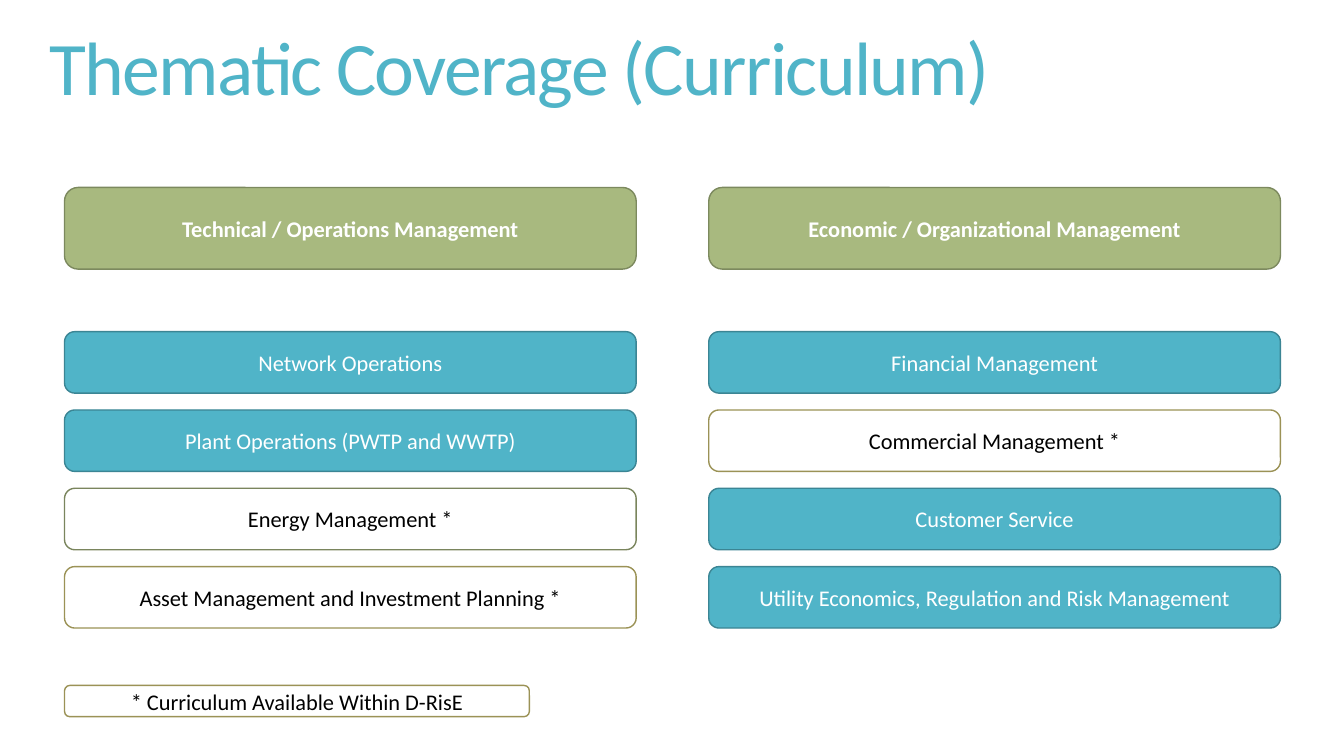
import pptx
import pptx.util
import pptx.dml.color
import pptx.enum.shapes
import pptx.enum.text

# Content: each box is (text, style)
TITLE = "Thematic Coverage (Curriculum)"
COLUMNS = [
    ("Technical / Operations Management", [
        ("Network Operations", "topic"),
        ("Plant Operations (PWTP and WWTP)", "topic"),
        ("Energy Management *", "available_green"),
        ("Asset Management and Investment Planning *", "available"),
    ]),
    ("Economic / Organizational Management", [
        ("Financial Management", "topic"),
        ("Commercial Management *", "available"),
        ("Customer Service", "topic"),
        ("Utility Economics, Regulation and Risk Management", "topic"),
    ]),
]
LEGEND = "* Curriculum Available Within D-RisE"

# Styles: fill, line, text colour, bold
STYLES = {
    "header": ("A8B97F", "7C895E", "FFFFFF", True),
    "topic": ("50B4C8", "3B8594", "FFFFFF", False),
    "available": ("FFFFFF", "9B9256", "000000", False),
    "available_green": ("FFFFFF", "7A855D", "000000", False),
}

# Grid in inches
LEFT, COL_W, COL_STEP = 0.64, 5.67, 6.39
HEADER_TOP, HEADER_H = 1.86, 0.81
TOPIC_TOP, TOPIC_H, TOPIC_STEP = 3.29, 0.61, 0.777

ALIGN = pptx.enum.text.PP_ALIGN


def color(hex_code):
    return pptx.dml.color.RGBColor.from_string(hex_code)


def inches(*lengths):
    return [pptx.util.Inches(n) for n in lengths]


def write(sp, text, size=16, hex_code="000000", bold=False,
          align=ALIGN.CENTER, line_spacing=None, tracking=None):
    tf = sp.text_frame
    tf.word_wrap = True
    tf.vertical_anchor = pptx.enum.text.MSO_ANCHOR.MIDDLE
    p = tf.paragraphs[0]
    p.alignment = align
    p.line_spacing = line_spacing
    r = p.add_run()
    r.text = text
    r.font.name = "Calibri"
    r.font.size = pptx.util.Pt(size)
    r.font.bold = bold
    r.font.color.rgb = color(hex_code)
    if tracking is not None:
        r.font._element.set("spc", str(round(tracking * 100)))


def add_box(s, text, style, left, top, width, height):
    fill, line, text_color, bold = STYLES[style]
    sp = s.shapes.add_shape(pptx.enum.shapes.MSO_SHAPE.ROUNDED_RECTANGLE,
                            *inches(left, top, width, height))
    sp.shadow.inherit = False
    sp.fill.solid()
    sp.fill.fore_color.rgb = color(fill)
    sp.line.color.rgb = color(line)
    sp.line.width = pptx.util.Pt(1)
    write(sp, text, hex_code=text_color, bold=bold)


def main():
    prs = pptx.Presentation()
    prs.slide_width, prs.slide_height = inches(13.33, 7.5)
    s = prs.slides.add_slide(prs.slide_layouts[6])

    # Title
    title = s.shapes.add_textbox(*inches(0.39, 0.21, 11.78, 1.02))
    write(title, TITLE, size=54, hex_code="50B4C8", align=ALIGN.LEFT,
          line_spacing=0.85, tracking=-1.2)

    # Two columns: a header above its topics
    for col, (header, topics) in enumerate(COLUMNS):
        left = LEFT + col * COL_STEP
        add_box(s, header, "header", left, HEADER_TOP, COL_W, HEADER_H)
        for row, (topic, style) in enumerate(topics):
            add_box(s, topic, style, left, TOPIC_TOP + row * TOPIC_STEP,
                    COL_W, TOPIC_H)

    # Legend
    add_box(s, LEGEND, "available", LEFT, 6.8, 4.61, 0.31)

    prs.save("out.pptx")


if __name__ == "__main__":
    main()
